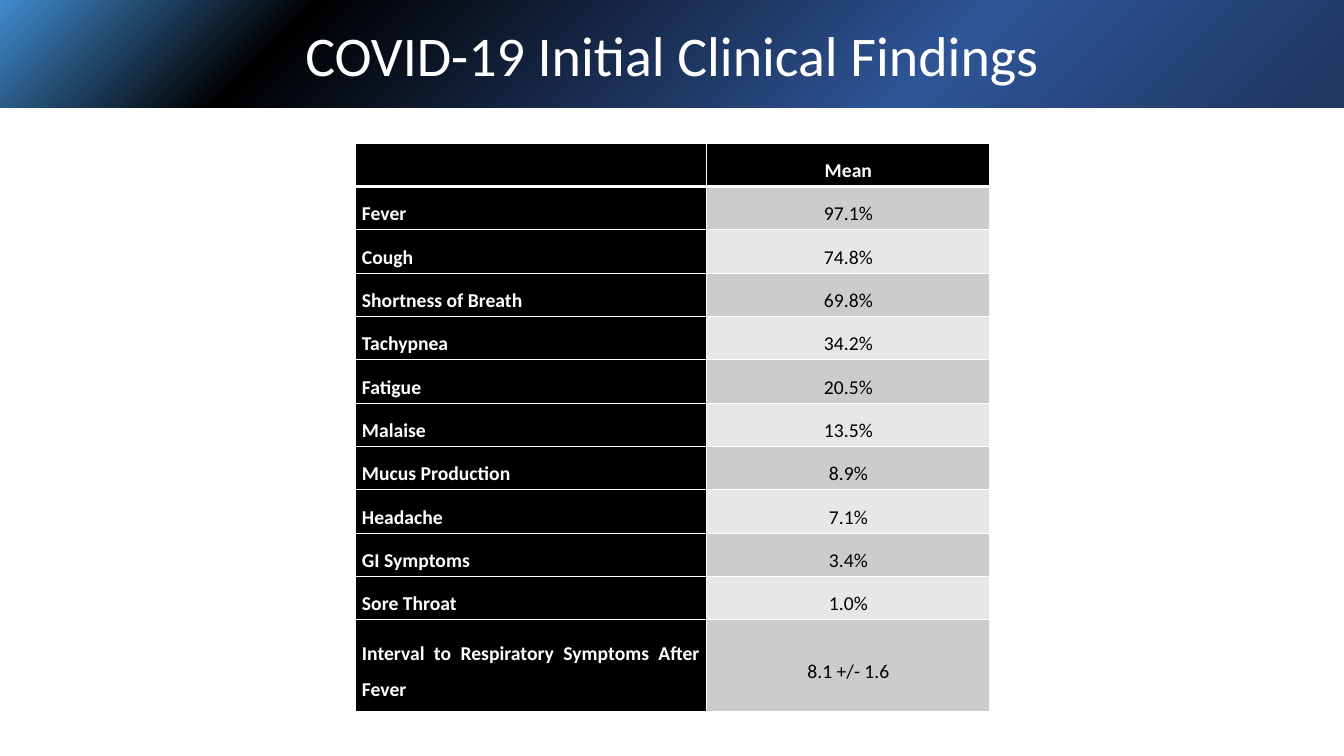
from lxml import etree
from pptx import Presentation
from pptx.dml.color import RGBColor
from pptx.enum.shapes import MSO_SHAPE as Shape
from pptx.enum.text import MSO_ANCHOR as Anchor, PP_ALIGN as Align
from pptx.oxml import parse_xml
from pptx.oxml.ns import nsdecls, qn
from pptx.util import Inches, Pt

TITLE = "COVID-19 Initial Clinical Findings"
FINDINGS = [
    ("", "Mean"),
    ("Fever", "97.1%"),
    ("Cough", "74.8%"),
    ("Shortness of Breath", "69.8%"),
    ("Tachypnea", "34.2%"),
    ("Fatigue", "20.5%"),
    ("Malaise", "13.5%"),
    ("Mucus Production", "8.9%"),
    ("Headache", "7.1%"),
    ("GI Symptoms", "3.4%"),
    ("Sore Throat", "1.0%"),
    ("Interval to Respiratory Symptoms After Fever", "8.1 +/- 1.6"),
]

BLACK = RGBColor(0, 0, 0)
WHITE = RGBColor(255, 255, 255)
BANDS = [RGBColor(0xE7, 0xE7, 0xE7), RGBColor(0xCC, 0xCC, 0xCC)]
BANNER_STOPS = [
    (0, RGBColor(0x40, 0x8B, 0xCE)),
    (22, BLACK),
    (69, RGBColor(0x2F, 0x55, 0x97)),
    (97, RGBColor(0x20, 0x38, 0x64)),
]
FONT = "Calibri"
WIDTH, HEIGHT = 13.33, 7.5
BANNER_HEIGHT = 1.07
TABLE_LEFT, TABLE_TOP = 3.52, 1.42
COLUMNS = [3.49, 2.81]
ROWS = [0.43] * (len(FINDINGS) - 1) + [0.91]


def write_text(frame, text, size=14, color=WHITE, bold=False, align=Align.CENTER, spacing=1.0):
    paragraph = frame.paragraphs[0]
    paragraph.alignment = align
    paragraph.line_spacing = spacing
    target = paragraph
    if text:
        target = paragraph.add_run()
        target.text = text
    font = target.font
    font.name, font.size, font.bold = FONT, Pt(size), bold
    font.color.rgb = color


def fill_gradient(shape, stops):
    stop_xml = "".join(
        f'<a:gs pos="{position * 1000}"><a:srgbClr val="{color}"/></a:gs>'
        for position, color in stops
    )
    gradient = parse_xml(
        f'<a:gradFill {nsdecls("a")} rotWithShape="1"><a:gsLst>{stop_xml}</a:gsLst>'
        '<a:path path="circle"><a:fillToRect r="100000" b="100000"/></a:path></a:gradFill>'
    )
    shape.fill.solid()
    properties = shape.element.spPr
    properties.replace(properties.find(qn("a:solidFill")), gradient)


def border_cell(cell, widths):
    properties = cell._tc.get_or_add_tcPr()
    for index, (side, width) in enumerate(widths.items()):
        line = etree.Element(qn(f"a:ln{side}"), w=str(Pt(width)))
        solid = etree.SubElement(line, qn("a:solidFill"))
        etree.SubElement(solid, qn("a:srgbClr"), val=str(WHITE))
        properties.insert(index, line)


def add_findings(slide):
    shape = slide.shapes.add_table(
        len(ROWS), len(COLUMNS), Inches(TABLE_LEFT), Inches(TABLE_TOP),
        Inches(sum(COLUMNS)), Inches(sum(ROWS)),
    )
    table = shape.table
    for column, width in zip(table.columns, COLUMNS):
        column.width = Inches(width)
    for row_index, (row, height, texts) in enumerate(zip(table.rows, ROWS, FINDINGS)):
        row.height = Inches(height)
        for column_index, (cell, text) in enumerate(zip(row.cells, texts)):
            is_label = column_index == 0
            is_dark = is_label or row_index == 0
            cell.margin_left = cell.margin_right = Inches(0.07)
            cell.margin_top = cell.margin_bottom = 0
            cell.vertical_anchor = Anchor.MIDDLE
            cell.fill.solid()
            cell.fill.fore_color.rgb = BLACK if is_dark else BANDS[row_index % 2]
            border_cell(cell, {
                "L": 1, "R": 1,
                "T": 3 if row_index == 1 else 1,
                "B": 3 if row_index == 0 else 1,
            })
            write_text(
                cell.text_frame, text, color=WHITE if is_dark else BLACK, bold=is_dark,
                align=Align.JUSTIFY if is_label else Align.CENTER, spacing=1.5,
            )


def add_banner(slide):
    banner = slide.shapes.add_shape(Shape.RECTANGLE, 0, 0, Inches(WIDTH), Inches(BANNER_HEIGHT))
    banner.shadow.inherit = False
    banner.line.fill.background()
    fill_gradient(banner, BANNER_STOPS)
    banner.text_frame.word_wrap = True
    banner.text_frame.vertical_anchor = Anchor.MIDDLE
    write_text(banner.text_frame, TITLE, size=40)


def main():
    presentation = Presentation()
    presentation.slide_width = Inches(WIDTH)
    presentation.slide_height = Inches(HEIGHT)
    slide = presentation.slides.add_slide(presentation.slide_layouts[6])
    add_findings(slide)
    add_banner(slide)
    presentation.save("out.pptx")


if __name__ == "__main__":
    main()
